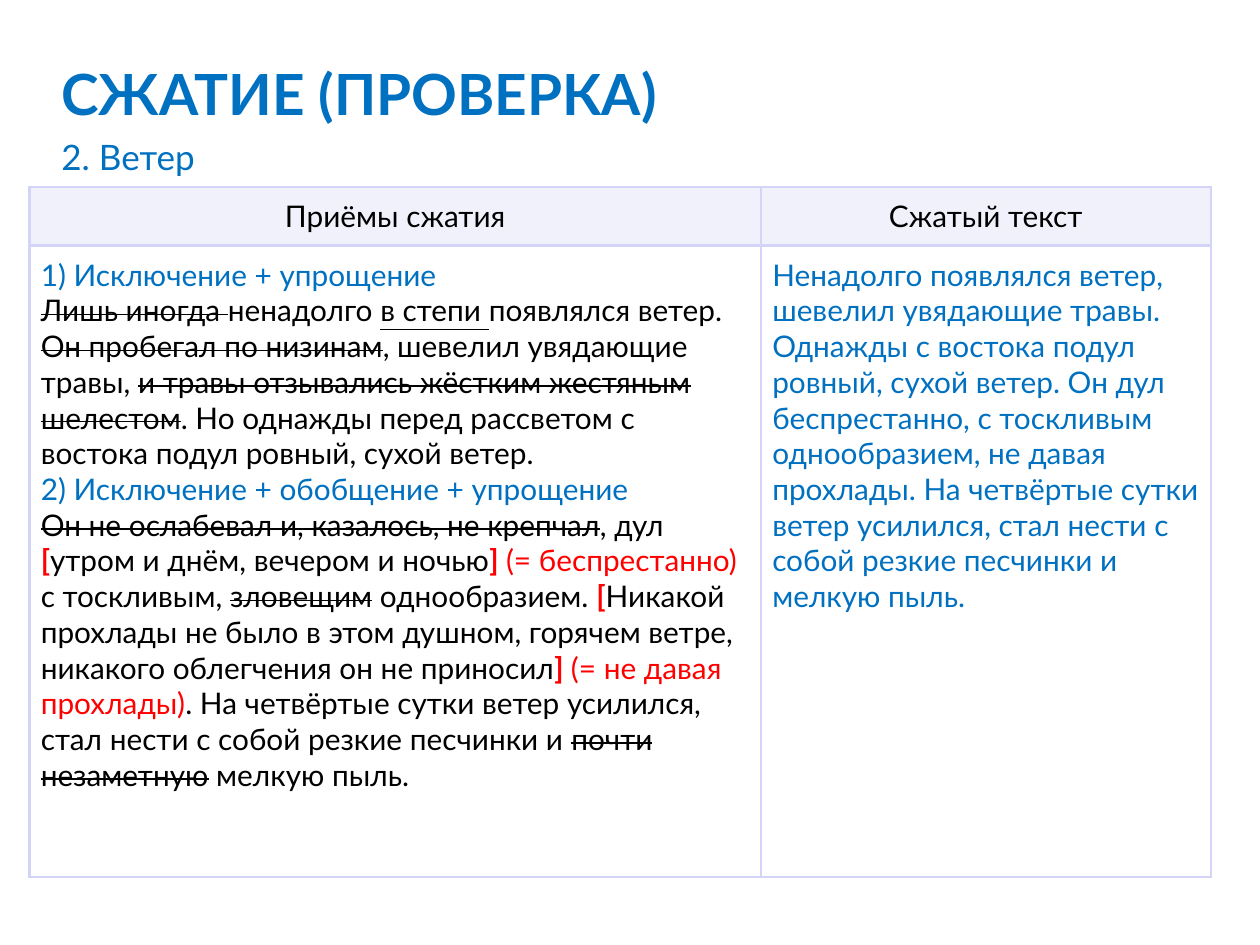
from lxml.etree import SubElement
from pptx import Presentation
from pptx.dml.color import RGBColor
from pptx.enum.text import MSO_ANCHOR, PP_ALIGN
from pptx.oxml.ns import qn
from pptx.util import Pt

FONT = "Lato"
BLUE, BLACK, RED = "0070C0", "000000", "FF0000"
BORDER, HEADER_FILL, BODY_FILL = "D4D4F9", "F1F1FC", "FFFFFF"
TEXT_SIZE = 17

# Run marks: what the editor did with each piece of text
KEEP, CUT, UNDERLINED, BRACKET, SUBSTITUTE, HEADING = range(6)
MARK_COLORS = {BRACKET: RED, SUBSTITUTE: RED, HEADING: BLUE}

HEADERS = ["Приёмы сжатия", "Сжатый текст"]
TECHNIQUES = [
    [("1) Исключение + упрощение", HEADING)],
    [("Лишь иногда ", CUT), ("ненадолго ", KEEP), ("в степи ", UNDERLINED),
     ("появлялся ветер. ", KEEP), ("Он пробегал по низинам", CUT),
     (", шевелил увядающие травы, ", KEEP),
     ("и травы отзывались жёстким жестяным шелестом", CUT),
     (". Но однажды перед рассветом с востока подул ровный, сухой ветер.", KEEP)],
    [("2) Исключение + обобщение + упрощение", HEADING)],
    [("Он не ослабевал и, казалось, не крепчал", CUT), (", дул ", KEEP),
     ("[", BRACKET), ("утром и днём, вечером и ночью", KEEP), ("] ", BRACKET),
     ("(= беспрестанно) ", SUBSTITUTE), ("с тоскливым, ", KEEP),
     ("зловещим", CUT), (" однообразием. ", KEEP), ("[", BRACKET),
     ("Никакой прохлады не было в этом душном, горячем ветре, "
      "никакого облегчения он не приносил", KEEP),
     ("] ", BRACKET), ("(= не давая прохлады)", SUBSTITUTE),
     (". На четвёртые сутки ветер усилился, стал нести с собой "
      "резкие песчинки и ", KEEP),
     ("почти незаметную", CUT), (" мелкую пыль.", KEEP)],
]
CONDENSED = [[(
    "Ненадолго появлялся ветер, шевелил увядающие травы. Однажды с востока "
    "подул ровный, сухой ветер. Он дул беспрестанно, с тоскливым "
    "однообразием, не давая прохлады. На четвёртые сутки ветер усилился, "
    "стал нести с собой резкие песчинки и мелкую пыль.", HEADING)]]


def rgb(value):
    return RGBColor.from_string(value)


def style_run(run, size, color, bold=False):
    run.font.name = FONT
    run.font.size = Pt(size)
    run.font.bold = bold
    run.font.color.rgb = rgb(color)


def add_line_of_text(slide, text, top, height, size, anchor, bold=False):
    box = slide.shapes.add_textbox(Pt(28), Pt(top), Pt(660), Pt(height))
    frame = box.text_frame
    frame.word_wrap = True
    frame.vertical_anchor = anchor
    frame.text = text
    style_run(frame.paragraphs[0].runs[0], size, BLUE, bold)


def style_cell(cell, fill):
    cell.margin_left = cell.margin_right = Pt(6.5)
    cell.margin_top = cell.margin_bottom = Pt(6.5)
    # Borders come before the fill in the cell properties
    properties = cell._tc.get_or_add_tcPr()
    for side in ("lnL", "lnR", "lnT", "lnB"):
        line = SubElement(properties, qn(f"a:{side}"), w=str(Pt(1.5)))
        solid = SubElement(line, qn("a:solidFill"))
        SubElement(solid, qn("a:srgbClr"), val=BORDER)
    cell.fill.solid()
    cell.fill.fore_color.rgb = rgb(fill)


def fill_header(cell, text):
    style_cell(cell, HEADER_FILL)
    cell.vertical_anchor = MSO_ANCHOR.MIDDLE
    cell.text_frame.text = text
    heading = cell.text_frame.paragraphs[0]
    heading.alignment = PP_ALIGN.CENTER
    style_run(heading.runs[0], TEXT_SIZE, BLACK)


def fill_body(cell, passages):
    style_cell(cell, BODY_FILL)
    frame = cell.text_frame
    for index, passage in enumerate(passages):
        paragraph = frame.add_paragraph() if index else frame.paragraphs[0]
        for text, mark in passage:
            run = paragraph.add_run()
            run.text = text
            style_run(run, TEXT_SIZE, MARK_COLORS.get(mark, BLACK), mark == BRACKET)
            if mark == UNDERLINED:
                run.font.underline = True
            if mark == CUT:
                run._r.get_or_add_rPr().set("strike", "sngStrike")


def add_comparison(slide):
    widths, heights = (418, 257), (33, 361)
    table = slide.shapes.add_table(
        2, 2, Pt(16.8), Pt(106.8), Pt(sum(widths)), Pt(sum(heights))).table
    table.first_row = table.horz_banding = False
    for column, width in zip(table.columns, widths):
        column.width = Pt(width)
    for row, height in zip(table.rows, heights):
        row.height = Pt(height)
    for column, (header, passages) in enumerate(zip(HEADERS, (TECHNIQUES, CONDENSED))):
        fill_header(table.cell(0, column), header)
        fill_body(table.cell(1, column), passages)


def main():
    presentation = Presentation()
    presentation.slide_width, presentation.slide_height = Pt(720), Pt(540)
    slide = presentation.slides.add_slide(presentation.slide_layouts[6])

    # Title and topic
    add_line_of_text(slide, "СЖАТИЕ (ПРОВЕРКА)", 28, 50, 32.4, MSO_ANCHOR.MIDDLE, bold=True)
    add_line_of_text(slide, "2. Ветер", 73.6, 34, 20, MSO_ANCHOR.TOP)

    # Marked-up passage beside its condensed version
    add_comparison(slide)
    presentation.save("out.pptx")


if __name__ == "__main__":
    main()
